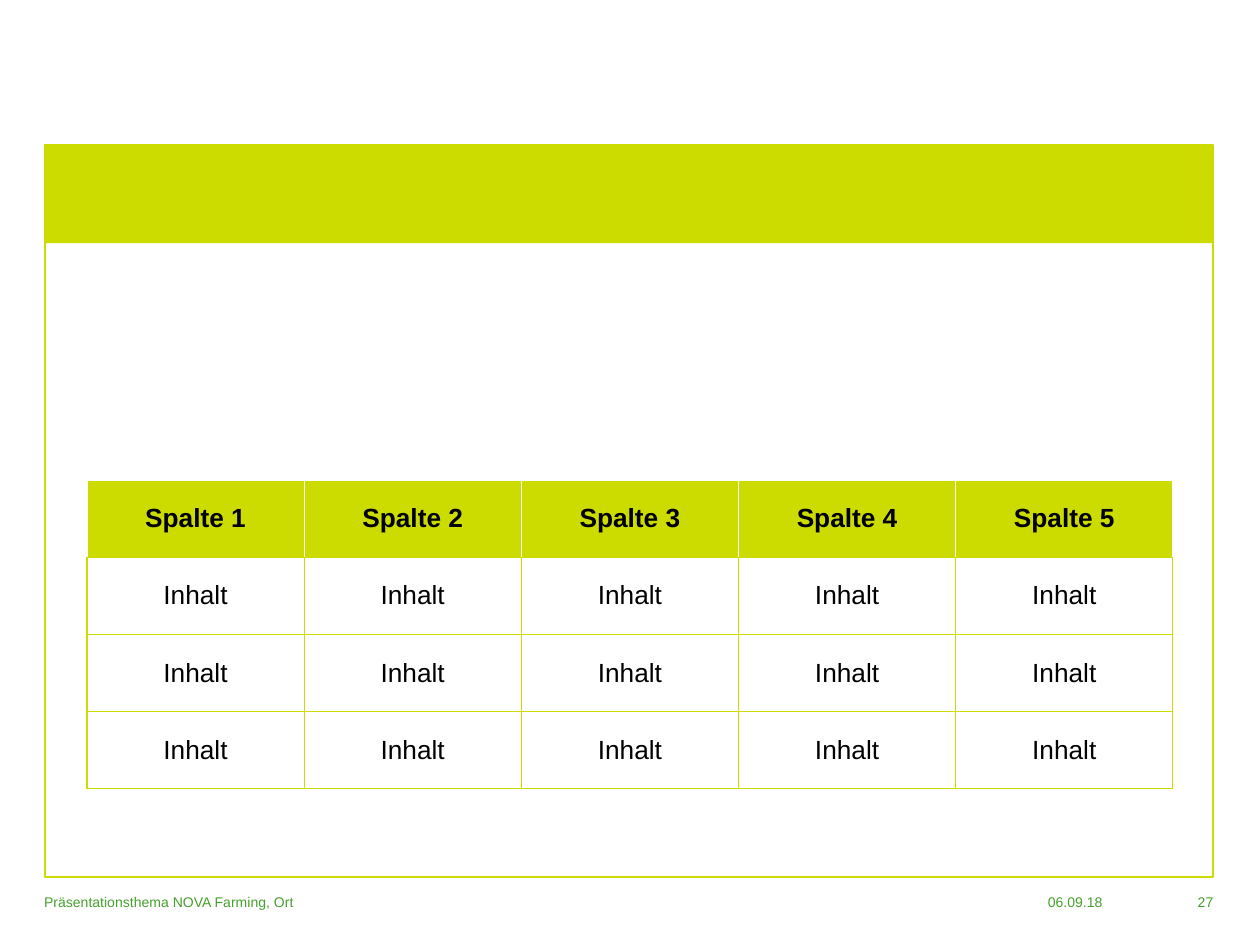
from lxml.etree import SubElement
from pptx import Presentation
from pptx.dml.color import RGBColor
from pptx.enum.shapes import MSO_SHAPE
from pptx.enum.text import MSO_ANCHOR, PP_ALIGN
from pptx.oxml.ns import qn
from pptx.util import Inches, Pt

COLORS = {"lime": "CDDC00", "green": "44A12C", "white": "FFFFFF", "black": "000000"}


def add_run(p, text, size, color, bold=False):
    r = p.add_run()
    r.text = text
    r.font.name = "Arial"
    r.font.size = Pt(size)
    r.font.bold = bold
    r.font.color.rgb = RGBColor.from_string(COLORS[color])


def add_border(cell, side, color):
    ln = SubElement(cell._tc.get_or_add_tcPr(), qn(f"a:ln{side}"), w=str(Pt(0.75)))
    fill = SubElement(ln, qn("a:solidFill"))
    SubElement(fill, qn("a:srgbClr"), val=COLORS[color])


prs = Presentation()
prs.slide_width = Inches(10)
prs.slide_height = Inches(7.5)
s = prs.slides.add_slide(prs.slide_layouts[6])

panels = [
    (0.36, 1.15, 9.27, 5.81, "white"),
    (0.35, 1.15, 9.28, 0.78, "lime"),
]
for x, y, w, h, color in panels:
    sp = s.shapes.add_shape(MSO_SHAPE.RECTANGLE, Inches(x), Inches(y), Inches(w), Inches(h))
    sp.shadow.inherit = False
    sp.fill.solid()
    sp.fill.fore_color.rgb = RGBColor.from_string(COLORS[color])
    if color == "white":
        sp.line.color.rgb = RGBColor.from_string(COLORS["lime"])
        sp.line.width = Pt(1)
    else:
        sp.line.fill.background()

footers = [
    ("Präsentationsthema NOVA Farming, Ort", 0.35, 7.09, 6.13, PP_ALIGN.LEFT),
    ("06.09.18", 7.97, 7.09, 0.78, PP_ALIGN.RIGHT),
    ("27", 8.73, 7.09, 0.9, PP_ALIGN.RIGHT),
]
for text, x, y, w, align in footers:
    sp = s.shapes.add_textbox(Inches(x), Inches(y), Inches(w), Inches(0.13))
    tf = sp.text_frame
    tf.word_wrap = True
    tf.margin_left = tf.margin_right = tf.margin_top = tf.margin_bottom = 0
    p = tf.paragraphs[0]
    p.alignment = align
    add_run(p, text, 8, "green")

rows = [[f"Spalte {n}" for n in range(1, 6)]] + [["Inhalt"] * 5] * 3
table = s.shapes.add_table(4, 5, Inches(0.69), Inches(3.81), Inches(8.62), Inches(2.45)).table
for i, row in enumerate(rows):
    header = i == 0
    for j, text in enumerate(row):
        cell = table.cell(i, j)
        cell.margin_left = cell.margin_right = Inches(0.04)
        cell.margin_top = cell.margin_bottom = Inches(0.04)
        cell.vertical_anchor = MSO_ANCHOR.MIDDLE
        for side in "LRTB":
            add_border(cell, side, "white" if header and side != "B" else "lime")
        cell.fill.solid()
        cell.fill.fore_color.rgb = RGBColor.from_string(COLORS["lime" if header else "white"])
        p = cell.text_frame.paragraphs[0]
        p.alignment = PP_ALIGN.CENTER
        add_run(p, text, 15, "black", header)

prs.save("out.pptx")
